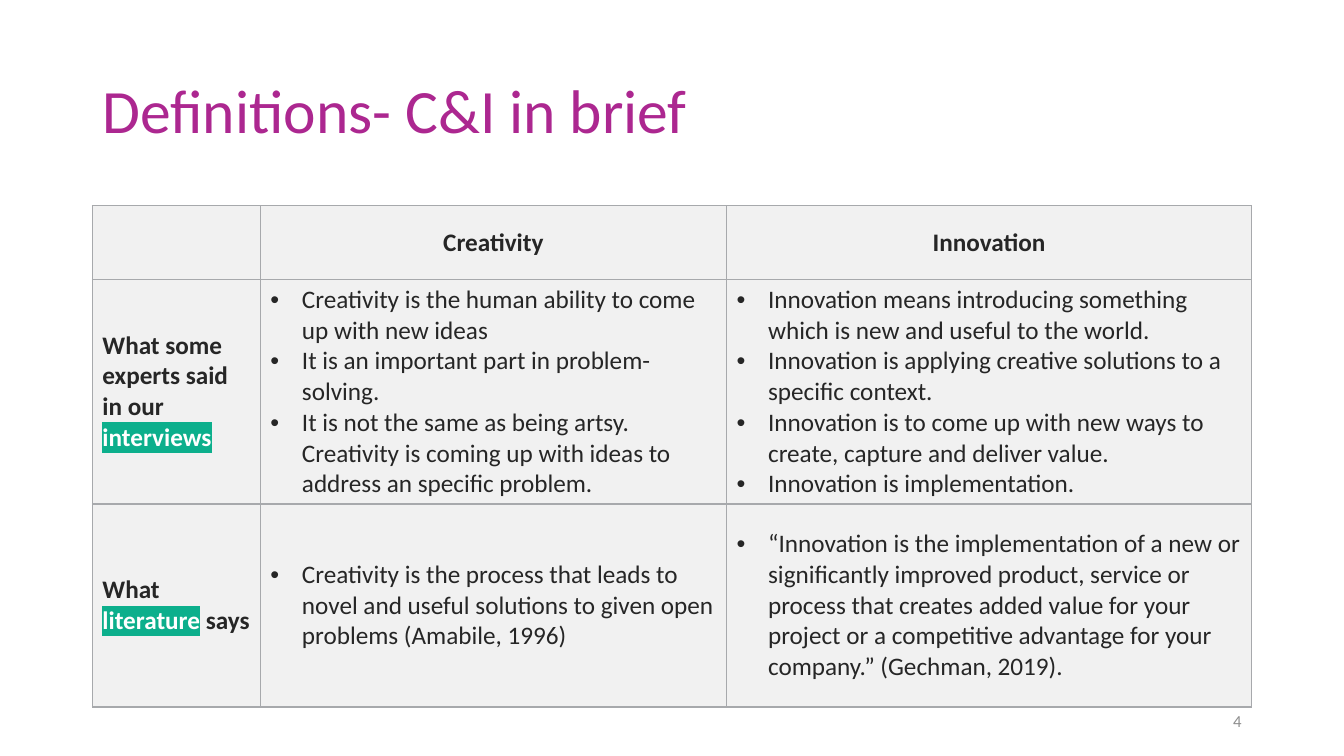
from pptx import Presentation
from pptx.dml.color import RGBColor
from pptx.enum.text import MSO_ANCHOR, PP_ALIGN
from pptx.oxml import parse_xml
from pptx.oxml.ns import nsdecls
from pptx.util import Pt

INK, WHITE, GREEN = "262626", "FFFFFF", "0CAF8C"
INDENT = Pt(22.5)


def style(font, size, color, bold=False):
    font.name, font.size, font.bold = "Calibri", Pt(size), bold
    font.color.rgb = RGBColor.from_string(color)


def add_line(left, top, width, height, text, size, color):
    box = slide.shapes.add_textbox(Pt(left), Pt(top), Pt(width), Pt(height))
    box.text_frame.word_wrap = True
    box.text_frame.vertical_anchor = MSO_ANCHOR.MIDDLE
    paragraph = box.text_frame.paragraphs[0]
    paragraph.text = text
    style(paragraph.font, size, color)
    return paragraph


deck = Presentation()
deck.slide_width, deck.slide_height = Pt(960), Pt(540)
slide = deck.slides.add_slide(deck.slide_layouts[6])

# Title and page number
title = add_line(66, 28.8, 663, 104.4, "Definitions- C&I in brief", 44, "AC2790")
title.line_spacing = 0.9
page_number = add_line(678, 500.4, 216, 28.8, "4", 12, "8E8E8E")
page_number.alignment = PP_ALIGN.RIGHT

# Table content: headings, then (label before, highlighted word, label after) and bullets
headings = ["", "Creativity", "Innovation"]
sources = [
    (("What some experts said in our ", "interviews", ""),
     ["Creativity is the human ability to come up with new ideas",
      "It is an important part in problem-solving.",
      "It is not the same as being artsy. Creativity is coming up with ideas "
      "to address an specific problem."],
     ["Innovation means introducing something which is new and useful to the world.",
      "Innovation is applying creative solutions to a specific context.",
      "Innovation is to come up with new ways to create, capture and deliver value.",
      "Innovation is implementation."]),
    (("What ", "literature", " says"),
     ["Creativity is the process that leads to novel and useful solutions to given "
      "open problems (Amabile, 1996)"],
     ["“Innovation is the implementation of a new or significantly improved product, "
      "service or process that creates added value for your project or a competitive "
      "advantage for your company.” (Gechman, 2019)."]),
]

# Table grid
column_widths = [120, 333, 375]
row_heights = [52.5, 160.5, 145]
definitions = slide.shapes.add_table(
    3, 3, Pt(66), Pt(147), Pt(sum(column_widths)), Pt(sum(row_heights))).table
definitions.first_row = definitions.horz_banding = False
for column, width in zip(definitions.columns, column_widths):
    column.width = Pt(width)
for row, height in zip(definitions.rows, row_heights):
    row.height = Pt(height)

# Cell fills and borders
for cell in definitions.iter_cells():
    cell.vertical_anchor = MSO_ANCHOR.MIDDLE
    properties = cell._tc.get_or_add_tcPr()
    for side in ("lnL", "lnR", "lnT", "lnB"):
        properties.append(parse_xml(
            f'<a:{side} {nsdecls("a")} w="12700"><a:solidFill>'
            f'<a:srgbClr val="A7A9AC"/></a:solidFill></a:{side}>'))
    cell.fill.solid()
    cell.fill.fore_color.rgb = RGBColor.from_string("F1F1F1")

# Headings
for column, heading in enumerate(headings):
    paragraph = definitions.cell(0, column).text_frame.paragraphs[0]
    paragraph.text = heading
    paragraph.alignment = PP_ALIGN.CENTER
    style(paragraph.font, 18, INK, bold=True)

for row, (label, *bullet_lists) in enumerate(sources, start=1):
    # Row label with its highlighted word
    paragraph = definitions.cell(row, 0).text_frame.paragraphs[0]
    before, keyword, after = label
    for text, color in ((before, INK), (keyword, WHITE), (after, INK)):
        if not text:
            continue
        run = paragraph.add_run()
        run.text = text
        style(run.font, 18, color, bold=True)
        if text == keyword:
            run.font.fill._xPr.solidFill.addnext(parse_xml(
                f'<a:highlight {nsdecls("a")}><a:srgbClr val="{GREEN}"/></a:highlight>'))

    # Bulleted definitions
    for column, bullets in enumerate(bullet_lists, start=1):
        frame = definitions.cell(row, column).text_frame
        for index, bullet in enumerate(bullets):
            paragraph = frame.add_paragraph() if index else frame.paragraphs[0]
            paragraph.text = bullet
            layout = paragraph._p.get_or_add_pPr()
            layout.set("marL", str(INDENT))
            layout.set("indent", str(-INDENT))
            layout.append(parse_xml(f'<a:buFont {nsdecls("a")} typeface="Arial"/>'))
            layout.append(parse_xml(f'<a:buChar {nsdecls("a")} char="•"/>'))
            style(paragraph.font, 18, INK)

deck.save("out.pptx")
